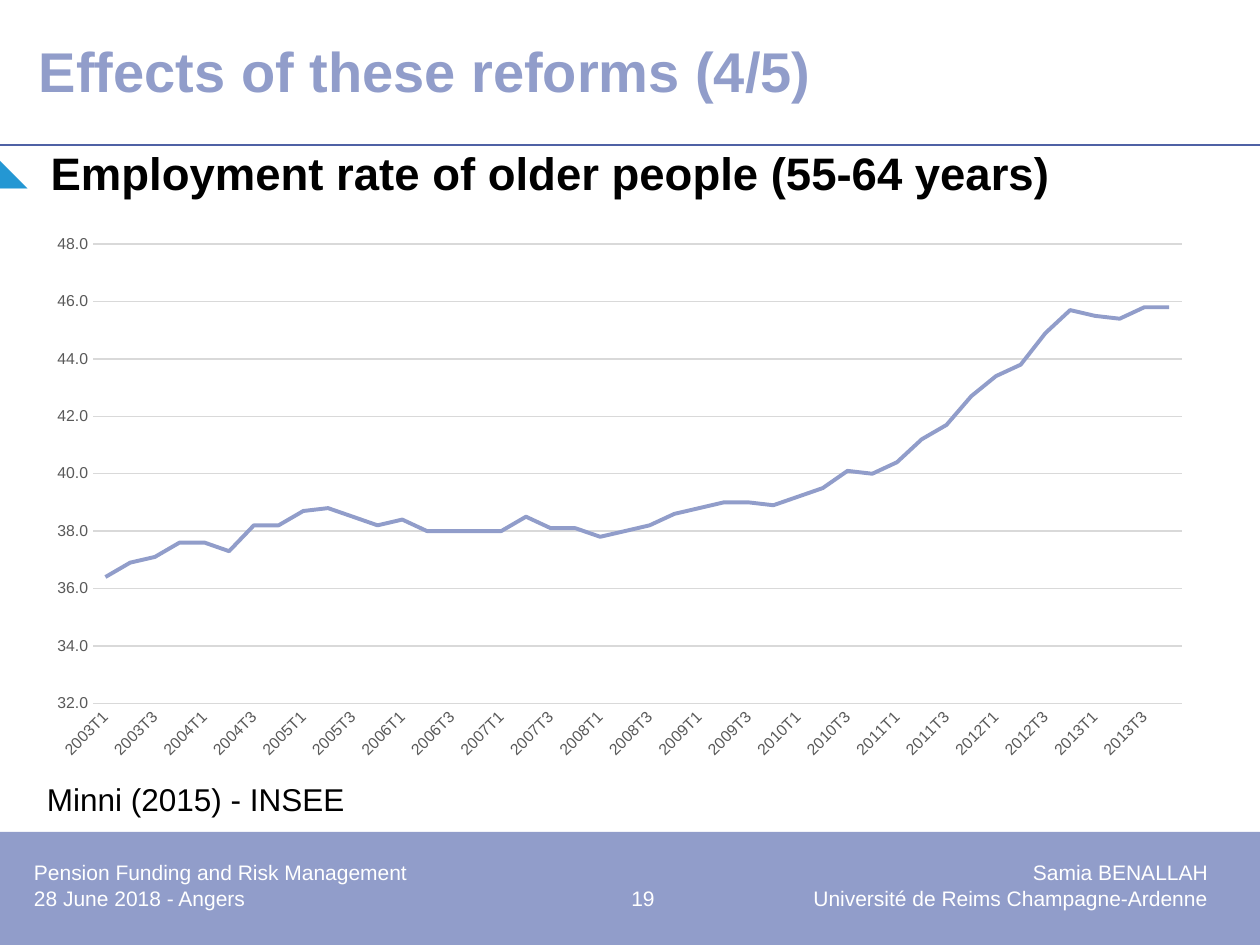
from lxml import etree
from pptx import Presentation
from pptx.chart.data import CategoryChartData
from pptx.dml.color import RGBColor
from pptx.enum.chart import XL_CHART_TYPE, XL_MARKER_STYLE, XL_TICK_MARK
from pptx.enum.shapes import MSO_CONNECTOR, MSO_SHAPE
from pptx.enum.text import MSO_ANCHOR
from pptx.oxml.ns import qn
from pptx.util import Emu, Pt

LINE_CHART = XL_CHART_TYPE.LINE
NO_MARKER = XL_MARKER_STYLE.NONE
NO_TICK = XL_TICK_MARK.NONE
STRAIGHT = MSO_CONNECTOR.STRAIGHT
RECTANGLE = MSO_SHAPE.RECTANGLE
TOP, MIDDLE = MSO_ANCHOR.TOP, MSO_ANCHOR.MIDDLE

LAVENDER = RGBColor(0x91, 0x9D, 0xCA)
INDIGO = RGBColor(0x4F, 0x61, 0xA5)
BLUE = RGBColor(0x24, 0x97, 0xD3)
BLACK = RGBColor(0, 0, 0)
WHITE = RGBColor(0xFF, 0xFF, 0xFF)
GREY = RGBColor(0x59, 0x59, 0x59)
PALE = RGBColor(0xD9, 0xD9, 0xD9)

FONT = "Arial"
QUARTERS = [f"{year}T{quarter}" for year in range(2003, 2014) for quarter in range(1, 5)]
RATES = [
    36.4, 36.9, 37.1, 37.6, 37.6, 37.3, 38.2, 38.2, 38.7, 38.8, 38.5,
    38.2, 38.4, 38, 38, 38, 38, 38.5, 38.1, 38.1, 37.8, 38,
    38.2, 38.6, 38.8, 39, 39, 38.9, 39.2, 39.5, 40.1, 40, 40.4,
    41.2, 41.7, 42.7, 43.4, 43.8, 44.9, 45.7, 45.5, 45.4, 45.8, 45.8,
]


def px(length):
    """Turn pixels, 126 to the inch, into EMU."""
    return Emu(round(length * 914400 / 126))


def style_font(font, size, color, bold=False):
    """Set the typeface, size, colour and weight of a font."""
    font.name = FONT
    font.size = Pt(size)
    font.bold = bold
    font.color.rgb = color


def add_text(page, place, lines, size, color, bold=False, anchor=TOP, inset=(0, 0)):
    """Add a wrapped text box with one paragraph per line."""
    box = page.shapes.add_textbox(*map(px, place))
    frame = box.text_frame
    frame.word_wrap = True
    frame.vertical_anchor = anchor
    frame.margin_left = frame.margin_right = px(inset[0])
    frame.margin_top = frame.margin_bottom = px(inset[1])
    for index, line in enumerate(lines):
        para = frame.add_paragraph() if index else frame.paragraphs[0]
        span = para.add_run()
        span.text = line
        style_font(span.font, size, color, bold)
    return frame


def add_band(page, place, color):
    """Add a plain filled rectangle."""
    band = page.shapes.add_shape(RECTANGLE, *map(px, place))
    band.shadow.inherit = False
    band.fill.solid()
    band.fill.fore_color.rgb = color
    band.line.fill.background()


def add_rule(page, start, end, color):
    """Add a thin straight line."""
    rule = page.shapes.add_connector(STRAIGHT, *map(px, start + end))
    rule.line.color.rgb = color
    rule.line.width = Pt(0.75)
    etree.SubElement(rule._element.spPr, qn("a:effectLst"))


def set_bullet(para, symbol, color, percent, indent):
    """Give a paragraph a coloured bullet with a hanging indent."""
    properties = para._p.get_or_add_pPr()
    properties.set("marL", str(px(indent)))
    properties.set("indent", str(-px(indent)))
    tint = etree.SubElement(properties, qn("a:buClr"))
    etree.SubElement(tint, qn("a:srgbClr"), val=str(color))
    etree.SubElement(properties, qn("a:buSzPct"), val=str(percent * 1000))
    etree.SubElement(properties, qn("a:buFont"), typeface=FONT)
    etree.SubElement(properties, qn("a:buChar"), char=symbol)


def set_tabs(para, stops):
    """Give a paragraph tab stops, each a position and an alignment."""
    tabs = etree.SubElement(para._p.get_or_add_pPr(), qn("a:tabLst"))
    for position, alignment in stops:
        etree.SubElement(tabs, qn("a:tab"), pos=str(px(position)), algn=alignment)


def style_axis(axis):
    """Remove tick marks and set the label font of an axis."""
    axis.major_tick_mark = axis.minor_tick_mark = NO_TICK
    style_font(axis.tick_labels.font, 9, GREY)


def add_rate_chart(page, place):
    """Add the line chart of quarterly employment rates."""
    data = CategoryChartData(number_format="0.0")
    data.categories = QUARTERS
    data.add_series("Series 1", RATES)
    chart = page.shapes.add_chart(LINE_CHART, *map(px, place), data).chart
    chart.has_legend = chart.has_title = False
    style_font(chart.font, 10, BLACK)
    chart.plots[0].vary_by_categories = False

    series = chart.plots[0].series[0]
    series.smooth = False
    series.marker.style = NO_MARKER
    series.format.line.color.rgb = LAVENDER
    series.format.line.width = Pt(2.25)

    quarters, rates = chart.category_axis, chart.value_axis
    style_axis(quarters)
    quarters._element.find(qn("c:txPr")).find(qn("a:bodyPr")).set("rot", "-2700000")
    style_axis(rates)
    rates.minimum_scale, rates.maximum_scale, rates.major_unit = 32, 48, 2
    rates.tick_labels.number_format = "0.0"
    rates.tick_labels.number_format_is_linked = False
    rates.format.line.fill.background()
    for line in (quarters.format.line, rates.major_gridlines.format.line):
        line.color.rgb = PALE
        line.width = Pt(0.75)


def main():
    """Build the slide and save it."""
    deck = Presentation()
    deck.slide_width, deck.slide_height = px(1260), px(945)
    page = deck.slides.add_slide(deck.slide_layouts[6])

    add_band(page, (0, 832, 1260, 113), LAVENDER)
    add_rule(page, (0, 145), (1260, 145), INDIGO)
    footer = add_text(page, (34, 860, 1191, 65), [
        "Pension Funding and Risk Management\t\tSamia BENALLAH",
        "28 June 2018 - Angers\t19\tUniversité de Reims Champagne-Ardenne",
    ], 12, WHITE)
    for para in footer.paragraphs:
        set_tabs(para, [(609, "ctr"), (1174, "r")])

    title = add_text(page, (39, 25, 1201, 100), ["Effects of these reforms (4/5)"],
                     32, LAVENDER, bold=True, anchor=MIDDLE)
    title.paragraphs[0].line_spacing = 0.85
    heading = add_text(page, (0, 145, 1260, 694),
                       [" Employment rate of older people (55-64 years)"],
                       26, BLACK, bold=True)
    set_bullet(heading.paragraphs[0], "◣", BLUE, 80, 38)
    add_rate_chart(page, (34, 224, 1171, 546))
    add_text(page, (34, 774, 1191, 50), ["Minni (2015) - INSEE"], 18, BLACK, inset=(13, 6))

    deck.save("out.pptx")


if __name__ == "__main__":
    main()
